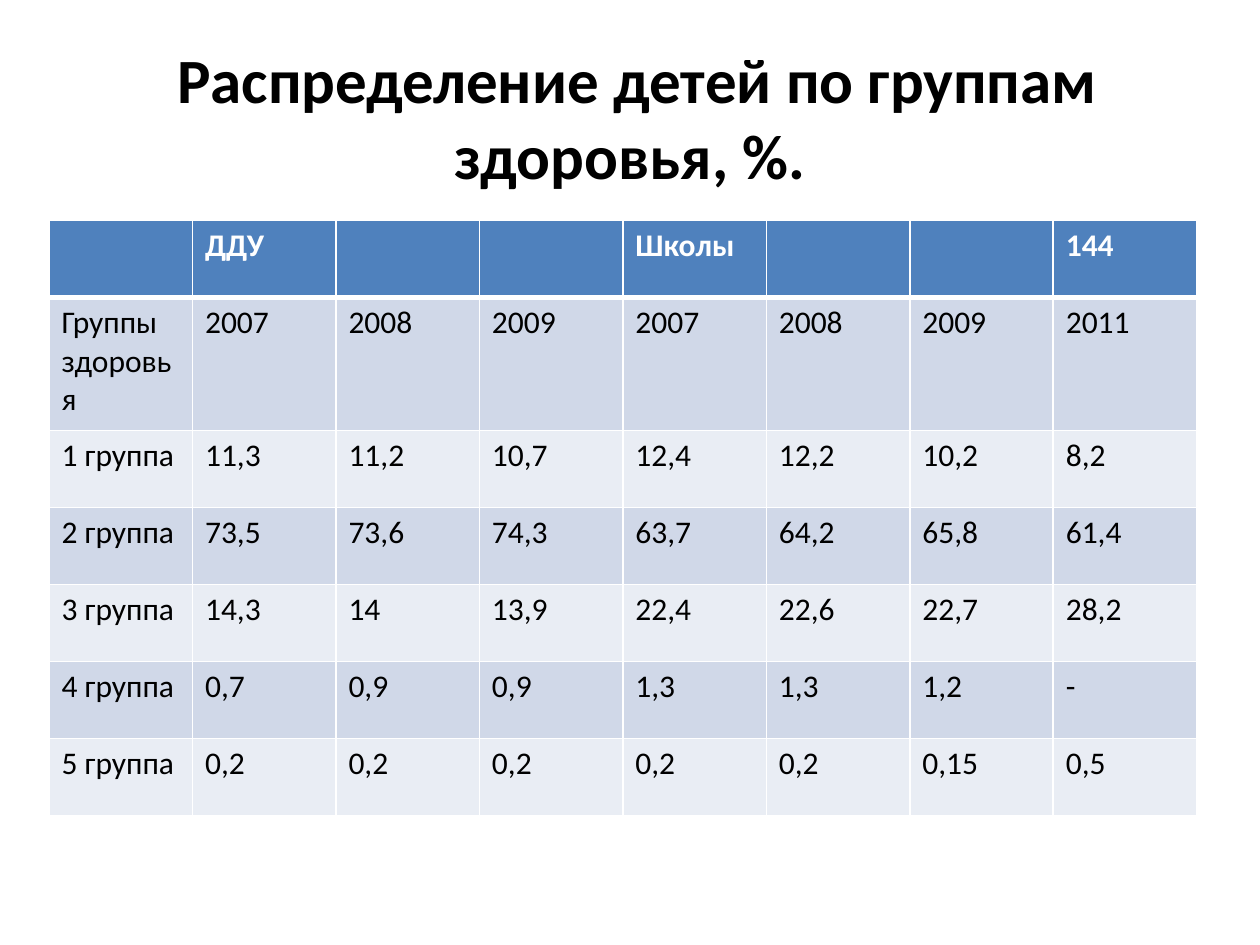
from dataclasses import dataclass

from lxml import etree
from pptx import Presentation
from pptx.dml.color import RGBColor
from pptx.enum import text
from pptx.oxml import ns
from pptx.util import Pt


@dataclass(frozen=True)
class Theme:
    font: str = "Calibri"
    ink: str = "000000"
    white: str = "FFFFFF"
    head: str = "4F81BD"
    bands: tuple = ("D0D8E8", "E9EDF4")
    title: int = 36
    body: int = 18
    rule: int = 1
    thick: int = 3


THEME = Theme()
TITLE = " Распределение детей по группам здоровья, %."
ROWS = [
    ["", "ДДУ", "", "", "Школы", "", "", "144"],
    ["Группы здоровья", "2007", "2008", "2009", "2007", "2008", "2009", "2011"],
    ["1 группа", "11,3", "11,2", "10,7", "12,4", "12,2", "10,2", "8,2"],
    ["2 группа", "73,5", "73,6", "74,3", "63,7", "64,2", "65,8", "61,4"],
    ["3 группа", "14,3", "14", "13,9", "22,4", "22,6", "22,7", "28,2"],
    ["4 группа", "0,7", "0,9", "0,9", "1,3", "1,3", "1,2", "-"],
    ["5 группа", "0,2", "0,2", "0,2", "0,2", "0,2", "0,15", "0,5"],
]


def write(frame, words, size=THEME.body, color=THEME.ink, bold=False,
          align=text.PP_ALIGN.LEFT):
    para = frame.paragraphs[0]
    para.alignment = align
    para.font.size = Pt(size)
    if words:
        run = para.add_run()
        run.text = words
        run.font.name = THEME.font
        run.font.size = Pt(size)
        run.font.bold = bold
        run.font.color.rgb = RGBColor.from_string(color)


def edge(cell, **widths):
    props = cell._tc.get_or_add_tcPr()
    for spot, side in enumerate("LRTB"):
        width = Pt(widths.get(side, THEME.rule))
        line = etree.Element(ns.qn(f"a:ln{side}"), w=str(width))
        fill = etree.SubElement(line, ns.qn("a:solidFill"))
        etree.SubElement(fill, ns.qn("a:srgbClr"), val=THEME.white)
        props.insert(spot, line)


def add_title(slide, left, top, width, height):
    box = slide.shapes.add_textbox(Pt(left), Pt(top), Pt(width), Pt(height))
    frame = box.text_frame
    frame.word_wrap = True
    frame.vertical_anchor = text.MSO_ANCHOR.MIDDLE
    write(frame, TITLE, size=THEME.title, bold=True,
          align=text.PP_ALIGN.CENTER)


def add_groups(slide, left, top, width, height, tall=76):
    count = len(ROWS)
    table = slide.shapes.add_table(count, len(ROWS[0]), Pt(left), Pt(top),
                                   Pt(width), Pt(height)).table
    for col in table.columns:
        col.width = Pt(width / len(ROWS[0]))
    for i, row in enumerate(ROWS):
        head = i == 0
        table.rows[i].height = Pt(tall if i == 1 else
                                  (height - tall) / (count - 1))
        fill = THEME.head if head else THEME.bands[(i - 1) % 2]
        sides = {0: {"B": THEME.thick}, 1: {"T": THEME.thick}}.get(i, {})
        for j, words in enumerate(row):
            cell = table.cell(i, j)
            cell.fill.solid()
            cell.fill.fore_color.rgb = RGBColor.from_string(fill)
            edge(cell, **sides)
            write(cell.text_frame, words, bold=head,
                  color=THEME.white if head else THEME.ink)


def main():
    deck = Presentation()
    deck.slide_width, deck.slide_height = Pt(720), Pt(540)
    slide = deck.slides.add_slide(deck.slide_layouts[6])
    add_title(slide, 36, 21.6, 648, 90)
    add_groups(slide, 28, 126, 656, 340)
    deck.save("out.pptx")


if __name__ == "__main__":
    main()
